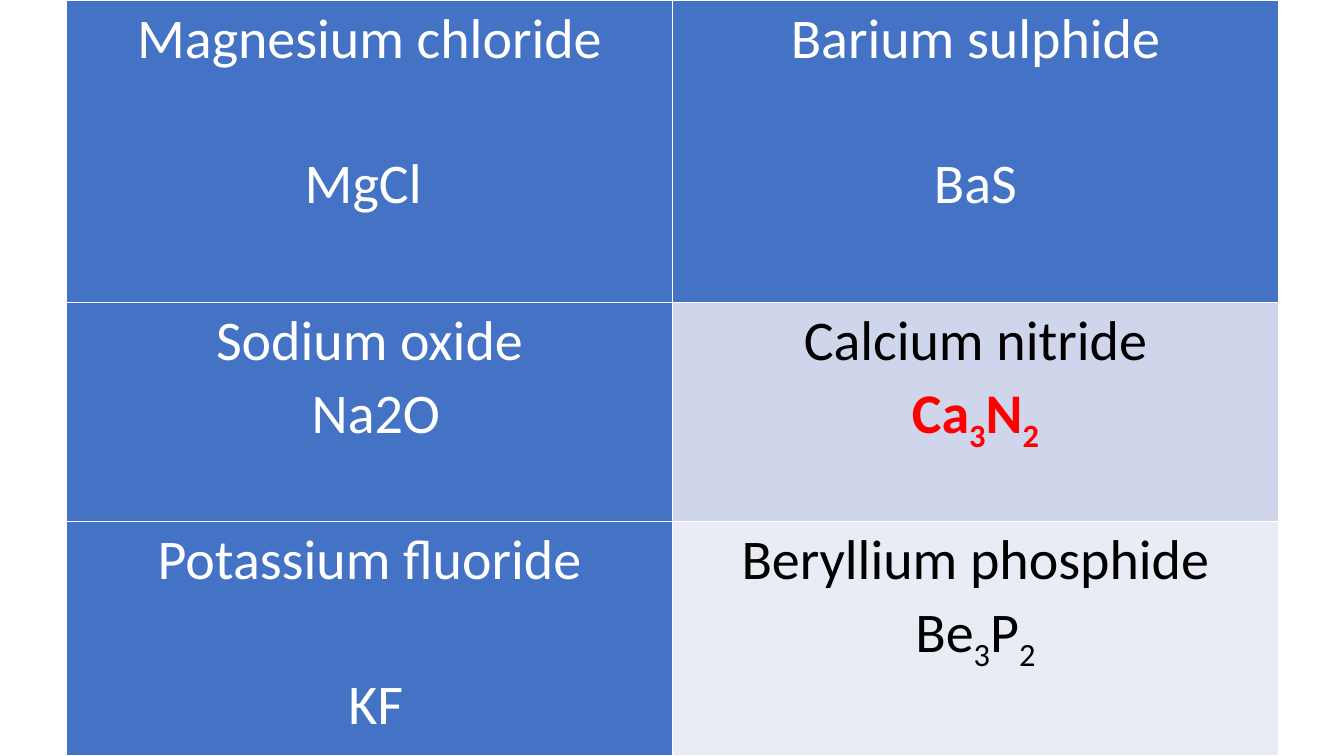
from lxml.etree import SubElement, Element
from pptx import Presentation
from pptx.dml.color import RGBColor
from pptx.enum.text import PP_ALIGN as Align
from pptx.oxml.ns import qn
from pptx.util import Inches, Pt

WHITE = RGBColor(0xFF, 0xFF, 0xFF)
BLACK = RGBColor(0, 0, 0)
RED = RGBColor(0xFF, 0, 0)
BLUE = RGBColor(0x44, 0x72, 0xC4)
BAND = RGBColor(0xCF, 0xD5, 0xEA)
PALE = RGBColor(0xE9, 0xEB, 0xF5)

SIZE = 40
SPACING = 1.07
LINE = 52  # points taken by one line of text

# Name, formula parts (every second part is a subscript),
# lines skipped above the formula, fill, name colour, formula colour
ROWS = [
    [("Magnesium chloride", ["MgCl "], 1, BLUE, WHITE, WHITE),
     ("Barium sulphide", ["BaS"], 1, BLUE, WHITE, WHITE)],
    [("Sodium oxide", [" Na2O"], 0, BLUE, WHITE, WHITE),
     ("Calcium nitride", ["Ca", "3", "N", "2"], 0, BAND, BLACK, RED)],
    [("Potassium fluoride", [" KF"], 1, BLUE, WHITE, WHITE),
     ("Beryllium phosphide", ["Be", "3", "P", "2"], 0, PALE, BLACK, BLACK)],
]

WIDE, HIGH = 13.33, 7.5
LEFT, COL = 0.66, 6.01
HEIGHTS = [3, 2.17, HIGH - 3 - 2.17]


def write(para, parts, color=BLACK, bold=False, skip=0):
    para.alignment = Align.CENTER
    para.line_spacing = SPACING
    para.space_before = Pt(skip * LINE)
    for i, part in enumerate(parts):
        run = para.add_run()
        run.text = part
        font = run.font
        font.name, font.size, font.bold = "Calibri", Pt(SIZE), bold
        font.color.rgb = color
        if i % 2:
            run._r.get_or_add_rPr().set("baseline", "-25000")


def edge(cell, color=WHITE, width=1):
    """Draw a line on all four sides of the cell."""
    props = cell._tc.get_or_add_tcPr()
    for i, side in enumerate("LRTB"):
        line = Element(qn("a:ln" + side), w=str(Pt(width)))
        fill = SubElement(line, qn("a:solidFill"))
        SubElement(fill, qn("a:srgbClr"), val=str(color))
        props.insert(i, line)


def fill_cell(cell, name, formula, skip, fill, ink, accent):
    cell.margin_left = cell.margin_right = Inches(0.07)
    cell.margin_top = cell.margin_bottom = 0
    cell.fill.solid()
    cell.fill.fore_color.rgb = fill
    edge(cell)
    frame = cell.text_frame
    write(frame.paragraphs[0], [name], color=ink)
    write(frame.add_paragraph(), formula, color=accent,
          bold=accent == RED, skip=skip)


def main():
    prs = Presentation()
    prs.slide_width, prs.slide_height = Inches(WIDE), Inches(HIGH)
    slide = prs.slides.add_slide(prs.slide_layouts[6])
    cols = len(ROWS[0])
    table = slide.shapes.add_table(
        len(ROWS), cols, Inches(LEFT), 0,
        Inches(COL * cols), Inches(sum(HEIGHTS))).table
    for col in table.columns:
        col.width = Inches(COL)
    for r, (row, high) in enumerate(zip(ROWS, HEIGHTS)):
        table.rows[r].height = Inches(high)
        for c, data in enumerate(row):
            fill_cell(table.cell(r, c), *data)
    prs.save("out.pptx")


if __name__ == "__main__":
    main()
